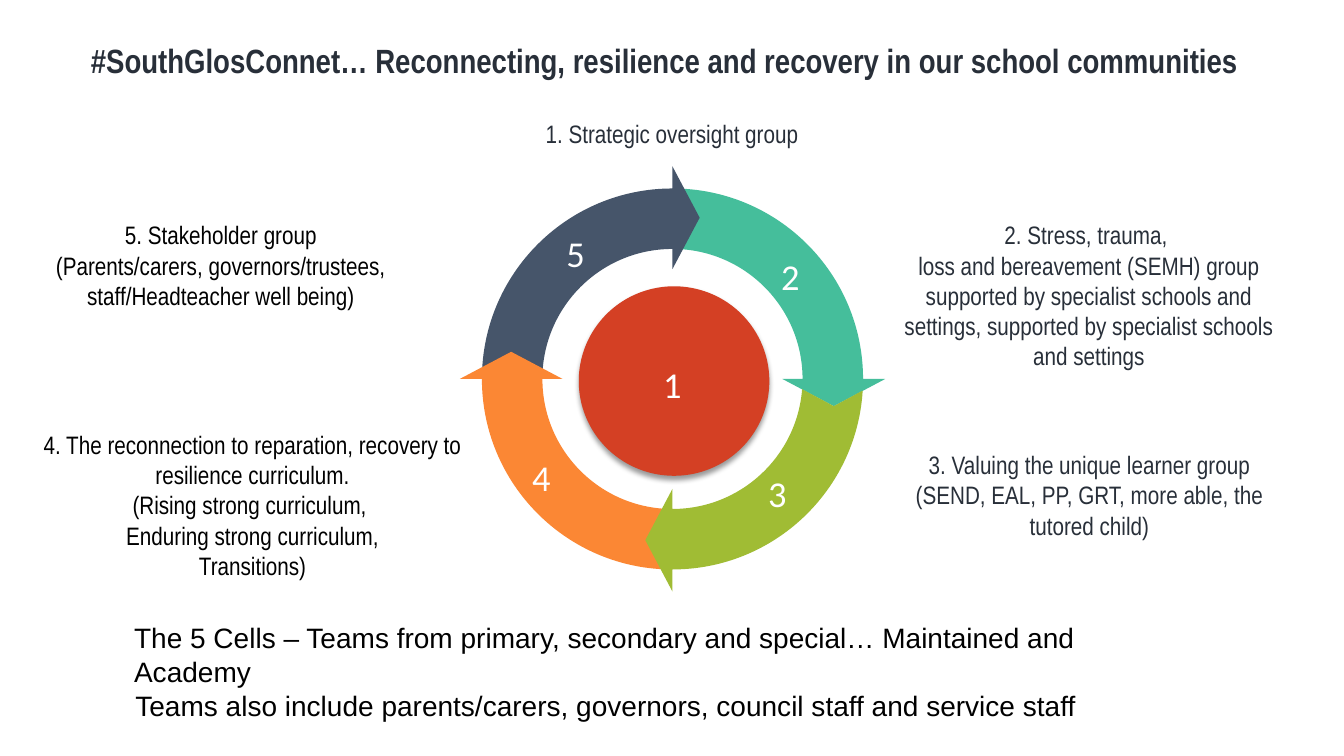
from dataclasses import dataclass
from math import cos, radians, sin, tan

from lxml import etree
from pptx import Presentation
from pptx import util as u
from pptx.dml.color import RGBColor
from pptx.enum import shapes, text
from pptx.oxml.ns import qn

DARK, BLACK, WHITE, RED = "282F39", "000000", "FFFFFF", "D44024"

# Ring geometry in inches; angles run clockwise from the top
CENTER_X, CENTER_Y = 6.67, 3.76
OUTER, INNER = 1.89, 1.29
HEAD_MIDDLE, HEAD_HALF, HEAD_LENGTH = 1.6, 0.51, 0.27

Point = tuple[int, int]


@dataclass
class Arrow:
    start: int
    color: str
    notched: bool = False


@dataclass
class Label:
    content: str
    left: float
    top: float
    width: float
    height: float
    size: int = 18
    font: str = "Arial Narrow"
    color: str = DARK
    bold: bool = False
    wrap: bool = True
    align: text.PP_ALIGN = text.PP_ALIGN.CENTER


# Each arrow covers the tail of the one before it; the last is notched instead
ARROWS = [
    Arrow(0, "45BE9B"),
    Arrow(270, "46556A"),
    Arrow(180, "FB8734"),
    Arrow(90, "A0BC34", notched=True),
]

NUMBERS = [
    Label(number, left, top, 0.3, 0.48, 26, "Calibri", WHITE, wrap=False)
    for number, left, top in [
        ("1", 6.52, 3.54), ("2", 7.69, 2.47), ("3", 7.56, 4.62),
        ("4", 5.22, 4.47), ("5", 5.56, 2.24),
    ]
]

LABELS = [
    Label("#SouthGlosConnet… Reconnecting, resilience and recovery in our "
          "school communities", 0.17, 0.35, 12.84, 0.47, size=24, bold=True),
    Label("1. Strategic oversight group", 4.85, 1.12, 3.63, 0.39),
    Label("2. Stress, trauma, \nloss and bereavement (SEMH) group\n"
          "supported by specialist schools and settings, "
          "supported by specialist schools and settings",
          8.9, 2.13, 3.8, 1.56),
    Label("3. Valuing the unique learner group (SEND, EAL, PP, GRT, "
          "more able, the tutored child)", 8.99, 4.41, 3.63, 0.97),
    Label("4. The reconnection to reparation, recovery to resilience "
          "curriculum.\n(Rising strong curriculum, \n"
          "Enduring strong curriculum,\nTransitions)",
          0.17, 4.21, 4.67, 1.56, color=BLACK),
    Label("5. Stakeholder group (Parents/carers, governors/trustees, "
          "staff/Headteacher well being)", 0.45, 2.13, 3.48, 0.97, color=BLACK),
]

SUMMARY = Label("The 5 Cells – Teams from primary, secondary and special… "
                "Maintained and Academy\nTeams also include parents/carers, "
                "governors, council staff and service staff",
                1.28, 6.11, 9.46, 1.08, 20, "Arial", BLACK,
                align=text.PP_ALIGN.LEFT)


def rgb(color: str) -> RGBColor:
    return RGBColor.from_string(color)


def paint(shape, color: str) -> None:
    shape.fill.solid()
    shape.fill.fore_color.rgb = rgb(color)
    shape.line.fill.background()
    shape.shadow.inherit = False


def ring_point(angle: float, radius: float, ahead: float = 0) -> Point:
    """Point on the ring, moved ahead along the clockwise tangent."""
    turn = radians(angle)
    x = CENTER_X + radius * sin(turn) + ahead * cos(turn)
    y = CENTER_Y - radius * cos(turn) + ahead * sin(turn)
    return u.Inches(x), u.Inches(y)


def bend(shape, segment, start: float, end: float, radius: float) -> None:
    """Turn a straight segment of a freeform into a circular curve."""
    reach = radius * 4 / 3 * tan(radians(end - start) / 4)
    segment.tag = qn("a:cubicBezTo")
    controls = [ring_point(start, radius, reach), ring_point(end, radius, -reach)]
    for position, (x, y) in enumerate(controls):
        control = etree.Element(qn("a:pt"), x=str(x - shape.left),
                                y=str(y - shape.top))
        segment.insert(position, control)


def add_arrow(container, arrow: Arrow) -> None:
    end = arrow.start + 90
    outer_start = arrow.start + (3.5 if arrow.notched else 0)
    inner_start = arrow.start + (4.5 if arrow.notched else 0)
    corners = [
        ring_point(outer_start, OUTER),
        ring_point(end, OUTER),
        ring_point(end, HEAD_MIDDLE + HEAD_HALF),
        ring_point(end, HEAD_MIDDLE, HEAD_LENGTH),
        ring_point(end, HEAD_MIDDLE - HEAD_HALF),
        ring_point(end, INNER),
        ring_point(inner_start, INNER),
    ]
    if arrow.notched:
        corners.append(ring_point(arrow.start, HEAD_MIDDLE, HEAD_LENGTH))
    builder = container.build_freeform(*corners[0])
    builder.add_line_segments(corners[1:], close=True)
    shape = builder.convert_to_shape()
    segments = list(shape._element.iter(qn("a:lnTo")))
    bend(shape, segments[0], outer_start, end, OUTER)
    bend(shape, segments[5], end, inner_start, INNER)
    paint(shape, arrow.color)


def add_hub(container) -> None:
    hub = container.add_shape(shapes.MSO_SHAPE.OVAL, u.Inches(5.74),
                              u.Inches(2.84), u.Inches(1.89), u.Inches(1.88))
    paint(hub, RED)
    effects = hub._element.spPr.find(qn("a:effectLst"))
    shadow = etree.SubElement(effects, qn("a:outerShdw"), blurRad="50800",
                              dist="38100", dir="5400000", rotWithShape="0")
    tint = etree.SubElement(shadow, qn("a:srgbClr"), val=BLACK)
    etree.SubElement(tint, qn("a:alpha"), val="40000")


def add_label(container, label: Label):
    box = container.add_textbox(u.Inches(label.left), u.Inches(label.top),
                                u.Inches(label.width), u.Inches(label.height))
    frame = box.text_frame
    frame.margin_left = frame.margin_right = u.Inches(0.05)
    frame.margin_top = frame.margin_bottom = u.Inches(0.05)
    frame.word_wrap = label.wrap
    frame.auto_size = text.MSO_AUTO_SIZE.SHAPE_TO_FIT_TEXT
    frame.text = label.content
    for para in frame.paragraphs:
        para.alignment = label.align
        for span in para.runs:
            span.font.name = label.font
            span.font.size = u.Pt(label.size)
            span.font.bold = label.bold
            span.font.color.rgb = rgb(label.color)
    return box


def main() -> None:
    deck = Presentation()
    deck.slide_width, deck.slide_height = u.Inches(13.33), u.Inches(7.5)
    page = deck.slides.add_slide(deck.slide_layouts[6])

    # Cycle of arrows around the hub
    cycle = page.shapes.add_group_shape().shapes
    for arrow in ARROWS:
        add_arrow(cycle, arrow)
    add_hub(cycle)
    for number in NUMBERS:
        add_label(cycle, number)

    # Title and group descriptions
    for label in LABELS:
        add_label(page.shapes, label)

    # Closing summary, with its last line centred
    summary = add_label(page.shapes, SUMMARY)
    summary.text_frame.paragraphs[-1].alignment = text.PP_ALIGN.CENTER

    deck.save("out.pptx")


if __name__ == "__main__":
    main()
